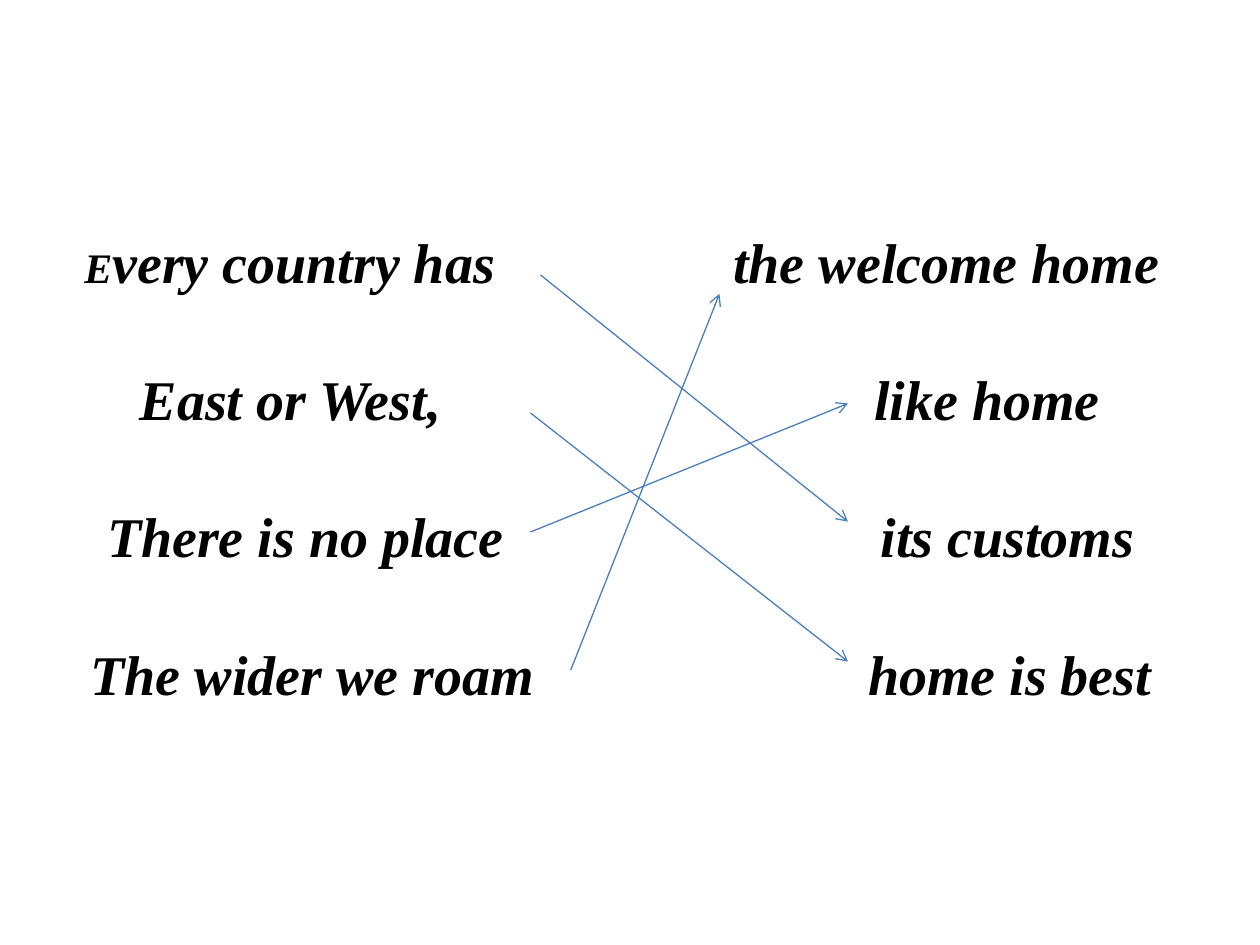
"""Build a slide that matches halves of proverbs about home."""
import pptx
import pptx.dml.color
import pptx.enum.shapes
import pptx.enum.text
import pptx.oxml
import pptx.oxml.ns
import pptx.util

WIDE, HIGH = 10, 7.5
BOX = (0.043, 0.048, 0.9, 0.892)
ROWS = [
    ("Every country has", 0.24, "the welcome home", 5.39),
    ("East or West,", 0.68, "like home", 6.51),
    ("There is no place", 0.42, "its customs", 6.56),
    ("The wider we roam", 0.29, "home is best", 6.46),
]
LINKS = [
    (0.429, 0.291, 0.673, 0.552),
    (0.421, 0.437, 0.673, 0.7),
    (0.421, 0.563, 0.673, 0.427),
    (0.453, 0.709, 0.571, 0.311),
]


def color(code):
    """Return the colour for a hex string."""
    return pptx.dml.color.RGBColor.from_string(code)


def place(shares):
    """Turn shares of the slide's size into lengths."""
    sizes = (WIDE, HIGH, WIDE, HIGH)
    return [pptx.util.Inches(part * size) for part, size in zip(shares, sizes)]


def write(para, text, size=32, ink="000000", face="Times New Roman"):
    """Add a bold italic run to a paragraph."""
    run = para.add_run()
    run.text = text
    font = run.font
    font.name, font.size = face, pptx.util.Pt(size)
    font.bold = font.italic = True
    font.color.rgb = color(ink)


def set_tabs(para, stops):
    """Give a paragraph left tab stops, in inches."""
    props = para._p.get_or_add_pPr()
    tabs = pptx.oxml.parse_xml(f"<a:tabLst {pptx.oxml.ns.nsdecls('a')}/>")
    for stop in stops:
        tab = tabs.makeelement(pptx.oxml.ns.qn("a:tab"), {})
        tab.set("pos", str(int(pptx.util.Inches(stop))))
        tab.set("algn", "l")
        tabs.append(tab)
    props.append(tabs)


def add_rows(slide):
    """Add the proverb halves, one row to a paragraph."""
    frame = slide.shapes.add_textbox(*place(BOX)).text_frame
    frame.word_wrap = True
    frame.margin_left = frame.margin_right = 0
    frame.vertical_anchor = pptx.enum.text.MSO_ANCHOR.MIDDLE
    for row, (left, start, right, stop) in enumerate(ROWS):
        para = frame.add_paragraph() if row else frame.paragraphs[0]
        para.alignment = pptx.enum.text.PP_ALIGN.LEFT
        if row:
            para.space_before = pptx.util.Pt(40)
        set_tabs(para, (start, stop))
        write(para, "\t" + left[0], size=32 if row else 24)
        write(para, f"{left[1:]}\t{right}")


def add_link(slide, ends):
    """Add an arrow between two matching halves."""
    kind = pptx.enum.shapes.MSO_CONNECTOR.STRAIGHT
    link = slide.shapes.add_connector(kind, *place(ends))
    link.line.color.rgb = color("4B7EBC")
    link.line.width = pptx.util.Pt(0.75)
    names = pptx.oxml.ns.nsdecls("a")
    head = pptx.oxml.parse_xml(f'<a:tailEnd {names} type="arrow"/>')
    link.line._get_or_add_ln().append(head)
    link._element.spPr.append(pptx.oxml.parse_xml(f"<a:effectLst {names}/>"))


def main():
    """Build and save the slide."""
    deck = pptx.Presentation()
    deck.slide_width = pptx.util.Inches(WIDE)
    deck.slide_height = pptx.util.Inches(HIGH)
    slide = deck.slides.add_slide(deck.slide_layouts[6])
    add_rows(slide)
    for ends in LINKS:
        add_link(slide, ends)
    deck.save("out.pptx")


if __name__ == "__main__":
    main()
